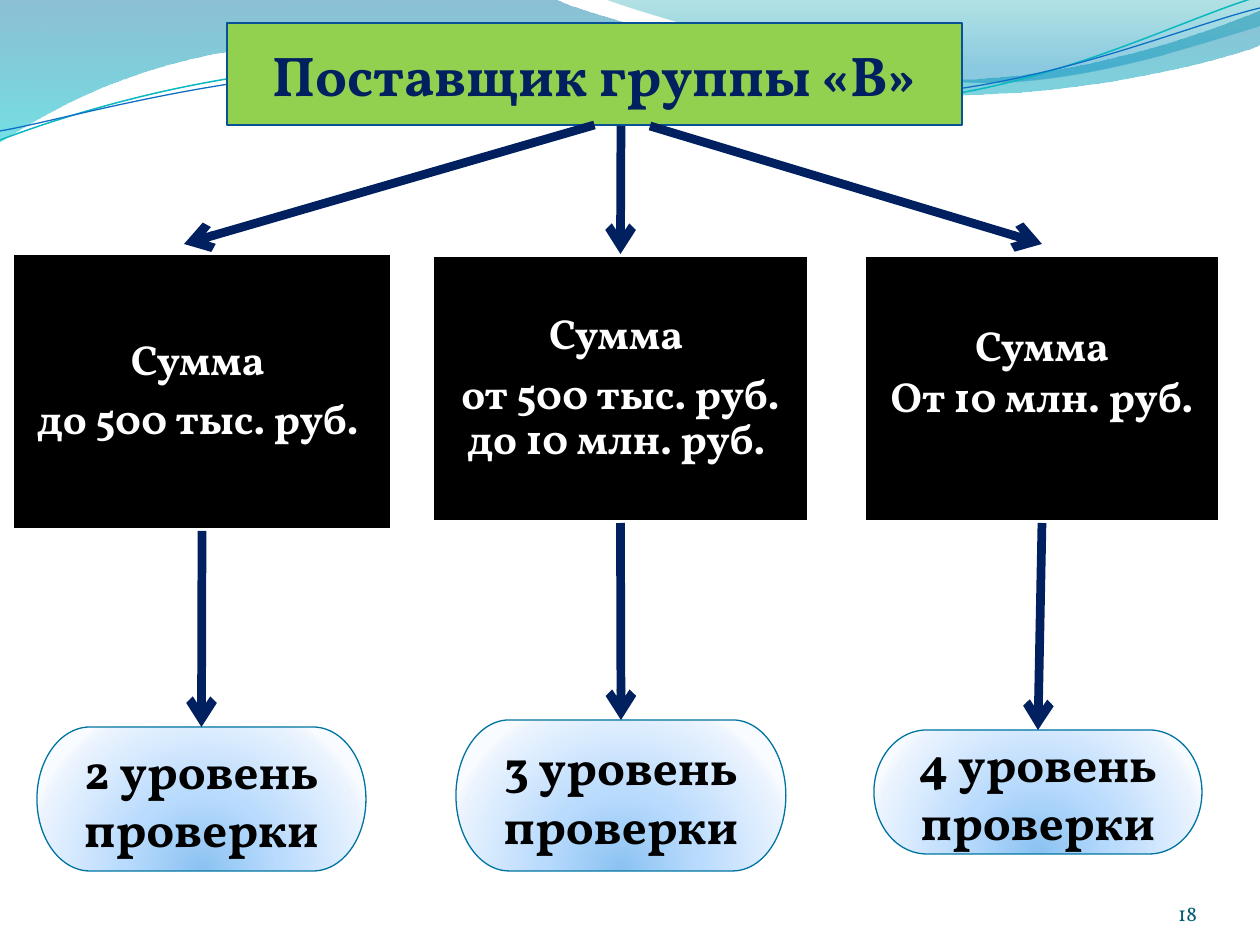
from dataclasses import dataclass

from lxml.etree import SubElement
from pptx import Presentation
from pptx.dml.color import RGBColor
from pptx.enum.shapes import MSO_CONNECTOR as Link, MSO_SHAPE as Preset
from pptx.enum.text import MSO_ANCHOR as Anchor, PP_ALIGN as Align
from pptx.oxml.ns import qn
from pptx.util import Emu, Pt

EMU_PER_PX = 914400 / 126
FONT = "Vollkorn"
NAVY = RGBColor(0x00, 0x20, 0x60)
GREEN = RGBColor(0x92, 0xD0, 0x50)
TITLE_EDGE = RGBColor(0x09, 0x52, 0x95)
LEVEL_EDGE = RGBColor(0x00, 0x74, 0xA1)
CYAN = RGBColor(0x00, 0xC6, 0xCF)
TEAL = RGBColor(0x00, 0xA1, 0xA9)
BLUE = RGBColor(0x00, 0x8B, 0xBF)
TEAL_LINE = RGBColor(0x0A, 0xB8, 0xBF)
BLUE_LINE = RGBColor(0x0F, 0x6F, 0xC6)
NUMBER = RGBColor(0x04, 0x5D, 0x75)
BLACK = RGBColor(0x00, 0x00, 0x00)
WHITE = RGBColor(0xFF, 0xFF, 0xFF)


@dataclass(frozen=True)
class Stop:
    percent: int
    color: RGBColor
    opacity: int = 100


@dataclass(frozen=True)
class Wave:
    segments: list
    stops: tuple = ()
    color: RGBColor = WHITE
    width: float = 0


@dataclass(frozen=True)
class Branch:
    box: tuple
    lines: str
    level: tuple
    label: str
    spacing: float = 1.0
    after: int = 0
    bottom_inset: int = 6


LEVEL_STOPS = (
    Stop(0, RGBColor(0x8B, 0xC2, 0xF1)),
    Stop(43, RGBColor(0xB9, 0xDB, 0xFD)),
    Stop(93, RGBColor(0xEA, 0xF3, 0xFE)),
    Stop(100, RGBColor(0xF8, 0xFB, 0xFF)),
)
WAVES = (
    Wave([[(-1, 0)], [(554, -1)],
          [(600, 21), (837, 79), (955, 79)], [(1074, 79), (1207, 33), (1260, 11)],
          [(1261, 45)],
          [(1239, 55), (1096, 96), (940, 95)], [(783, 95), (481, 35), (324, 43)],
          [(163, 45), (58, 105), (-1, 142)]],
         (Stop(0, LEVEL_EDGE, 45), Stop(100, CYAN, 55))),
    Wave([[(604, -1)],
          [(641, 14), (859, 78), (969, 82)], [(1079, 87), (1211, 40), (1260, 26)],
          [(1260, 0)]],
         (Stop(0, TEAL, 30), Stop(80, BLUE, 45))),
    Wave([[(0, 140)], [(60, 117), (199, 72), (349, 66)],
          [(498, 59), (747, 112), (898, 101)], [(1049, 89), (1182, 19), (1257, -3)]],
         color=TEAL_LINE, width=0.85),
    Wave([[(0, 131)], [(59, 121), (207, 77), (357, 71)],
          [(508, 64), (752, 106), (903, 95)], [(1053, 84), (1186, 26), (1260, 8)]],
         color=BLUE_LINE, width=0.75),
)
BRANCHES = (
    Branch((11, 252, 382, 279), "Сумма \nдо 500 тыс. руб. ",
           (37, 727, 329, 144), "2 уровень проверки", 0.9, 8),
    Branch((431, 254, 379, 269), "Сумма \nот 500 тыс. руб. до 10 млн. руб. ",
           (456, 720, 330, 151), "3 уровень проверки", 0.9, 8),
    Branch((863, 254, 358, 269), "Сумма\nОт 10 млн. руб.",
           (874, 730, 328, 124), "4 уровень проверки", bottom_inset=43),
)


def px(value: float) -> Emu:
    return Emu(round(value * EMU_PER_PX))


def set_gradient(shape, stops: tuple, radial: bool = False) -> None:
    shape.fill.solid()
    solid = shape.element.spPr.find(qn("a:solidFill"))
    gradient = solid.makeelement(qn("a:gradFill"), {"rotWithShape": "1"})
    solid.getparent().replace(solid, gradient)
    stop_list = SubElement(gradient, qn("a:gsLst"))
    for stop in stops:
        node = SubElement(stop_list, qn("a:gs"), pos=str(stop.percent * 1000))
        color = SubElement(node, qn("a:srgbClr"), val=str(stop.color))
        if stop.opacity < 100:
            SubElement(color, qn("a:alpha"), val=str(stop.opacity * 1000))
    if radial:
        focus = SubElement(gradient, qn("a:path"), path="circle")
        SubElement(focus, qn("a:fillToRect"), l="50000", t="130000", r="50000", b="-30000")
    else:
        SubElement(gradient, qn("a:lin"), ang="5400000", scaled="1")


def bend(shape, segments: list) -> None:
    straights = list(shape.element.iter(qn("a:lnTo")))
    for straight, segment in zip(straights, segments):
        if len(segment) == 3:
            curve = straight.makeelement(qn("a:cubicBezTo"))
            straight.getparent().replace(straight, curve)
            for x, y in segment:
                SubElement(curve, qn("a:pt"), x=str(px(x) - shape.left), y=str(px(y) - shape.top))


def draw_wave(page, wave: Wave) -> None:
    points = [tuple(map(px, segment[-1])) for segment in wave.segments]
    builder = page.shapes.build_freeform(*points[0], scale=1.0)
    builder.add_line_segments(points[1:], close=bool(wave.stops))
    shape = builder.convert_to_shape()
    bend(shape, wave.segments[1:])
    shape.shadow.inherit = False
    if wave.stops:
        set_gradient(shape, wave.stops)
        shape.line.fill.background()
    else:
        shape.fill.background()
        set_line(shape, wave.color, wave.width)


def set_line(shape, color: RGBColor, width: float) -> None:
    shape.line.color.rgb = color
    shape.line.width = Pt(width)


def set_text(shape, text: str, size: int, color: RGBColor, bold: bool = True,
             align=Align.CENTER, anchor=Anchor.MIDDLE) -> None:
    frame = shape.text_frame
    frame.text = text
    frame.word_wrap = True
    frame.vertical_anchor = anchor
    for para in frame.paragraphs:
        para.alignment = align
        for span in para.runs:
            span.font.name = FONT
            span.font.size = Pt(size)
            span.font.bold = bold
            span.font.color.rgb = color


def draw_title(page):
    title = page.shapes.title
    title.element.getparent().append(title.element)
    title.left, title.top, title.width, title.height = map(px, (227, 23, 735, 102))
    title.fill.solid()
    title.fill.fore_color.rgb = GREEN
    set_line(title, TITLE_EDGE, 0.75)
    set_text(title, "Поставщик группы «В»", 32, NAVY)
    return title


def draw_box(page, branch: Branch):
    box = page.shapes.add_shape(Preset.RECTANGLE, *map(px, branch.box))
    box.shadow.inherit = False
    box.fill.solid()
    box.fill.fore_color.rgb = BLACK
    set_line(box, WHITE, 3)
    set_text(box, branch.lines, 24, WHITE)
    box.text_frame.margin_bottom = px(branch.bottom_inset)
    for para in box.text_frame.paragraphs:
        para.line_spacing = branch.spacing
        para.space_after = Pt(branch.after)
    return box


def draw_level(page, branch: Branch):
    level = page.shapes.add_shape(Preset.FLOWCHART_TERMINATOR, *map(px, branch.level))
    level.shadow.inherit = False
    set_gradient(level, LEVEL_STOPS, radial=True)
    set_line(level, LEVEL_EDGE, 0.75)
    set_text(level, branch.label, 28, BLACK)
    return level


def draw_arrow(page, start: tuple = (0, 0), end: tuple = (0, 0), source=None, target=None) -> None:
    arrow = page.shapes.add_connector(Link.STRAIGHT, *map(px, (*start, *end)))
    if source is not None:
        arrow.begin_connect(source, 2)
    if target is not None:
        arrow.end_connect(target, 0)
    set_line(arrow, NAVY, 5)
    properties = arrow.element.spPr
    SubElement(properties.find(qn("a:ln")), qn("a:tailEnd"), type="arrow")
    SubElement(properties, qn("a:effectLst"))


def main() -> None:
    deck = Presentation()
    deck.slide_width, deck.slide_height = px(1260), px(945)
    page = deck.slides.add_slide(deck.slide_layouts[5])
    for wave in WAVES:
        draw_wave(page, wave)
    title = draw_title(page)
    boxes = [draw_box(page, branch) for branch in BRANCHES]
    levels = [draw_level(page, branch) for branch in BRANCHES]
    draw_arrow(page, (595, 125), (184, 244), source=title)
    draw_arrow(page, (621, 126), (621, 254), target=boxes[1])
    draw_arrow(page, (650, 126), (1042, 244))
    for box, level in zip(boxes, levels):
        draw_arrow(page, source=box, target=level)
    number = page.shapes.add_textbox(*map(px, (1092, 876, 105, 50)))
    set_text(number, "18", 12, NUMBER, False, Align.RIGHT, Anchor.BOTTOM)
    frame = number.text_frame
    frame.margin_left = frame.margin_right = frame.margin_top = frame.margin_bottom = 0
    deck.save("out.pptx")


if __name__ == "__main__":
    main()
